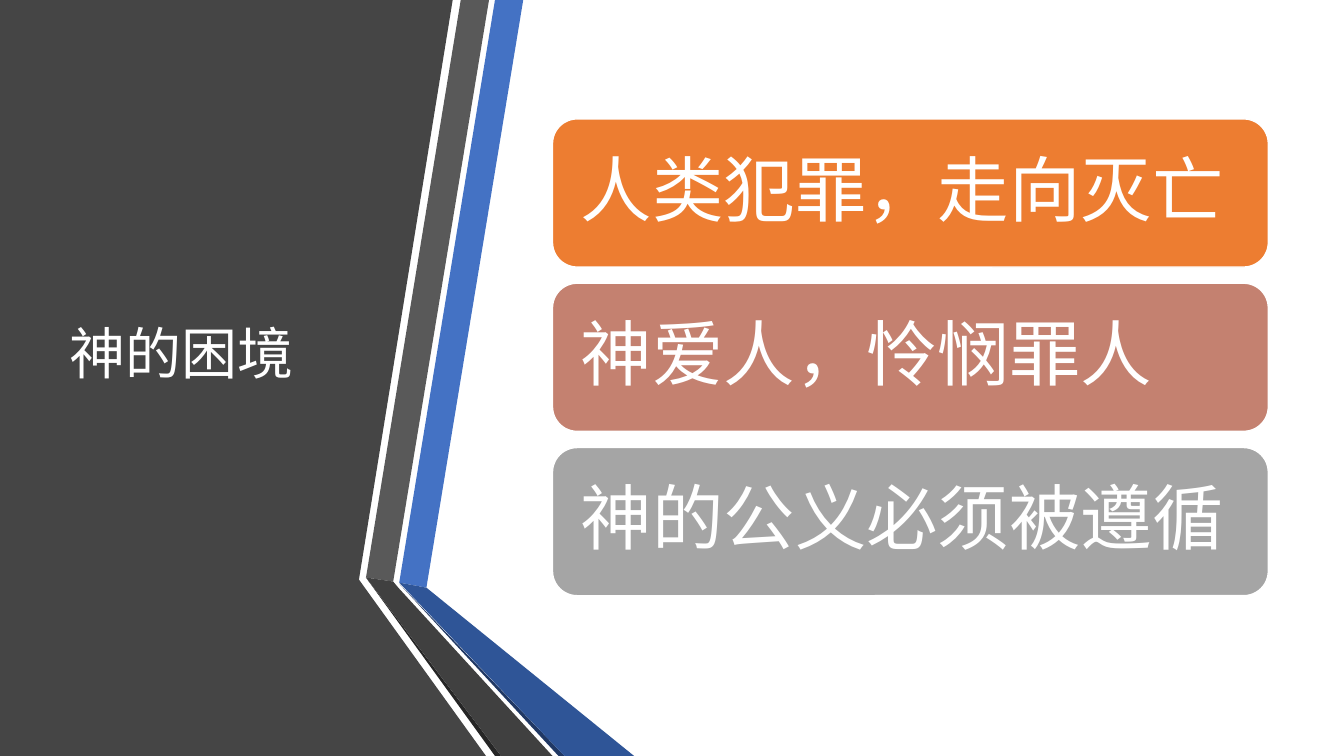
from dataclasses import dataclass

from pptx import Presentation
from pptx.dml.color import RGBColor as RGB
from pptx.enum.shapes import MSO_SHAPE as Shape
from pptx.enum.text import MSO_ANCHOR as Anchor, MSO_AUTO_SIZE as AutoSize, PP_ALIGN as Align
from pptx.util import Inches, Pt


@dataclass(frozen=True)
class Theme:
    font: str = "Calibri"
    title_size: int = 40
    card_size: int = 51
    white: str = "FFFFFF"
    panel: str = "454545"
    blue: str = "4472C4"
    blue_fold: str = "2F5597"
    blue_edge: str = "203864"
    gray: str = "595959"
    gray_fold: str = "404040"
    gray_edge: str = "262626"
    cards: tuple = ("ED7D31", "C48170", "A5A5A5")


@dataclass(frozen=True)
class Box:
    x: float
    y: float
    w: float
    h: float


THEME = Theme()
SLIDE = Box(0, 0, 13.33, 7.5)
UNIT = Inches(0.01)  # freeform points are whole hundredths of an inch


def style_text(tf, text, size, space_after=0):
    """Left-aligned white text, centred vertically."""
    tf.word_wrap = True
    tf.auto_size = AutoSize.NONE
    tf.vertical_anchor = Anchor.MIDDLE
    p = tf.paragraphs[0]
    p.text = text
    p.alignment = Align.LEFT
    p.line_spacing = 0.9
    p.space_before = Pt(0)
    p.space_after = Pt(space_after)
    p.font.name = THEME.font
    p.font.size = Pt(size)
    p.font.color.rgb = RGB.from_string(THEME.white)


def add_polygon(shapes, box, points, color):
    """Filled outline; points are inches from the box corner."""
    start, *rest = [((box.x + x) * 100, (box.y + y) * 100) for x, y in points]
    builder = shapes.build_freeform(*start, scale=UNIT)
    builder.add_line_segments(rest, close=True)
    sp = builder.convert_to_shape()
    sp.shadow.inherit = False
    sp.fill.solid()
    sp.fill.fore_color.rgb = RGB.from_string(color)
    sp.line.fill.background()


def add_ribbons(shapes, box):
    """Dark panel with two folded ribbons along its right edge."""
    base = box.h
    outlines = [
        # Panel
        (THEME.panel, [(0, 0), (4.49, 0), (3.56, 5.75), (4.82, base), (0, base)]),
        # Upper ribbons
        (THEME.blue, [(3.96, 5.78), (4.23, 5.83), (5.19, 0), (4.91, 0)]),
        (THEME.gray, [(3.63, 5.73), (3.9, 5.77), (4.85, 0), (4.57, 0)]),
        # Shaded edges of the folds
        (THEME.gray_edge, [(3.63, 5.73), (4.91, base), (4.97, base)]),
        (THEME.blue_edge, [(3.96, 5.79), (5.54, base), (5.6, base)]),
        # Lower folds
        (THEME.blue_fold, [(3.96, 5.78), (5.6, base), (6.29, base), (4.23, 5.83)]),
        (THEME.gray_fold, [(3.63, 5.73), (4.97, base), (5.48, base),
                           (3.95, 5.83), (3.9, 5.77)]),
    ]
    group = shapes.add_group_shape()
    for color, points in outlines:
        add_polygon(group.shapes, box, points, color)


def add_title(slide, box, text):
    """Title placeholder on the dark panel."""
    title = slide.shapes.title
    title.left, title.top = Inches(box.x), Inches(box.y)
    title.width, title.height = Inches(box.w), Inches(box.h)
    style_text(title.text_frame, text, THEME.title_size)


def add_cards(shapes, box, texts, gap=0.16):
    """Equal rounded cards stacked to fill the box."""
    height = (box.h - gap * (len(texts) - 1)) / len(texts)
    for row, (text, color) in enumerate(zip(texts, THEME.cards)):
        top = box.y + row * (height + gap)
        sp = shapes.add_shape(Shape.ROUNDED_RECTANGLE, Inches(box.x), Inches(top),
                              Inches(box.w), Inches(height))
        sp.shadow.inherit = False
        sp.fill.solid()
        sp.fill.fore_color.rgb = RGB.from_string(color)
        sp.line.color.rgb = RGB.from_string(THEME.white)
        sp.line.width = Pt(1)
        tf = sp.text_frame
        tf.margin_left = tf.margin_right = Inches(0.21)
        tf.margin_top = tf.margin_bottom = Inches(0.21)
        style_text(tf, text, THEME.card_size, space_after=18)


def main():
    prs = Presentation()
    prs.slide_width, prs.slide_height = Inches(SLIDE.w), Inches(SLIDE.h)
    slide = prs.slides.add_slide(prs.slide_layouts.get_by_name("Title Only"))

    add_ribbons(slide.shapes, SLIDE)
    # Bring the title in front of the panel
    tree = slide.shapes.title.element.getparent()
    tree.append(slide.shapes.title.element)
    add_title(slide, Box(0.59, SLIDE.h * 0.1, 3.04, 5.58), "神的困境")
    add_cards(slide.shapes, Box(5.48, 1.18, 7.1, 4.73),
              ["人类犯罪，走向灭亡", "神爱人，怜悯罪人", "神的公义必须被遵循"])

    prs.save("out.pptx")


if __name__ == "__main__":
    main()
